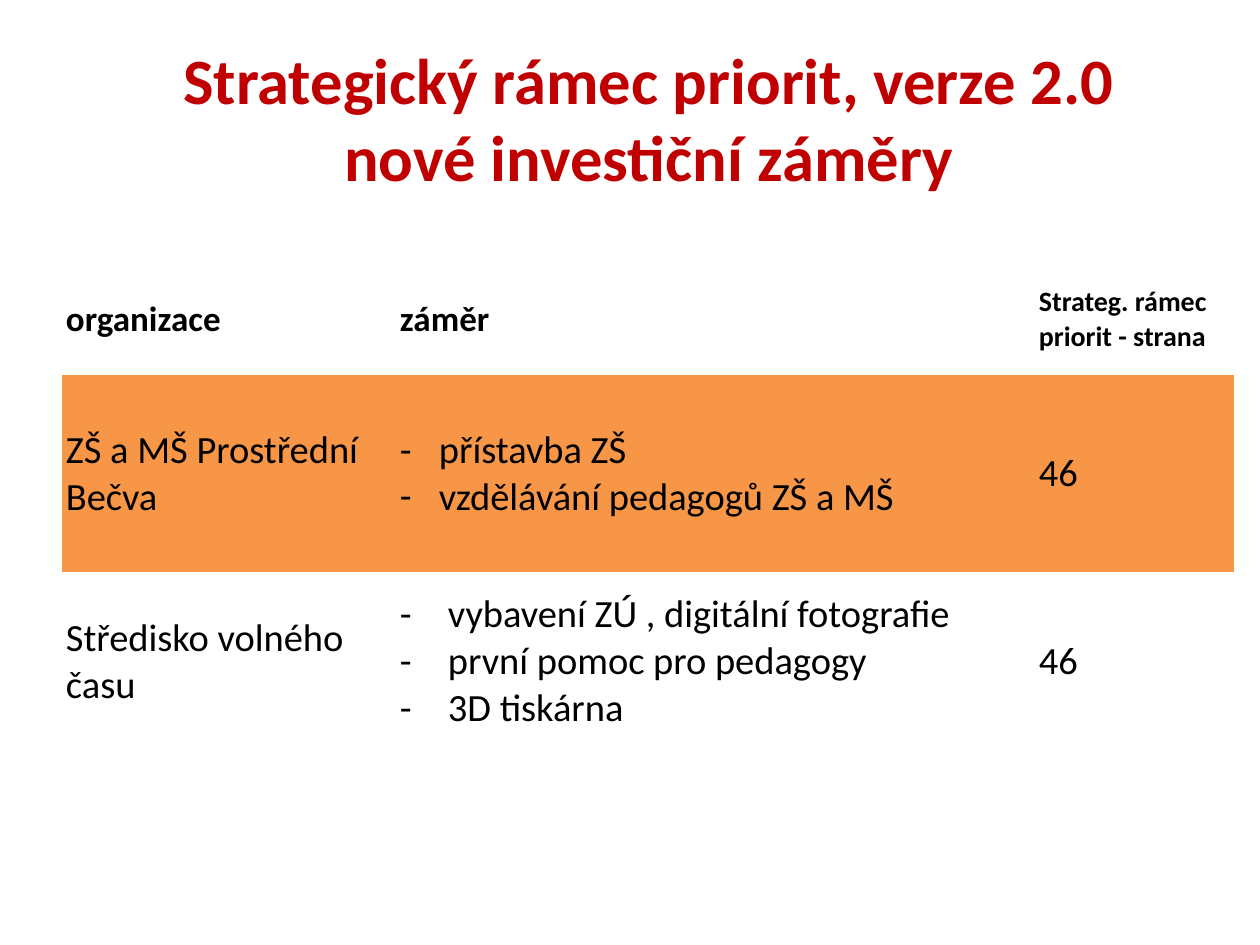
from lxml.etree import SubElement
from pptx import Presentation
from pptx.dml.color import RGBColor
from pptx.enum.text import MSO_ANCHOR, PP_ALIGN
from pptx.oxml.ns import qn
from pptx.util import Emu, Pt

FONT = "Calibri"
RED = RGBColor(0xC0, 0x00, 0x00)
BLACK = RGBColor(0x00, 0x00, 0x00)
ORANGE = RGBColor(0xF7, 0x96, 0x46)
PLAIN_TABLE = "{2D5ABB26-0587-4C30-8999-92F81FD0307C}"

HEADING = ["Strategický rámec priorit, verze 2.0", "nové investiční záměry"]
COLUMNS = [("organizace", 20), ("záměr", 20), ("Strateg. rámec priorit - strana", 16)]
PROJECTS = [
    ("ZŠ a MŠ Prostřední Bečva",
     ["přístavba ZŠ", "vzdělávání pedagogů ZŠ a MŠ"], "46", 39, ORANGE),
    ("Středisko volného času",
     ["vybavení ZÚ , digitální fotografie", "první pomoc pro pedagogy", "3D tiskárna"],
     "46", 48, None),
]


def px(length):
    return Emu(round(length * 914400 / 126))


def add_run(paragraph, text, size, color=BLACK, bold=False):
    run = paragraph.add_run()
    run.text = text
    run.font.name = FONT
    run.font.size = Pt(size)
    run.font.bold = bold
    run.font.color.rgb = color


def add_dash(paragraph, indent):
    properties = paragraph._p.get_or_add_pPr()
    properties.set("marL", str(px(indent)))
    properties.set("indent", str(-px(indent)))
    SubElement(properties, qn("a:buFont"), typeface=FONT)
    SubElement(properties, qn("a:buChar"), char="-")


def fill_cell(cell, lines, size, bold=False, indent=0, background=None):
    cell.vertical_anchor = MSO_ANCHOR.MIDDLE
    cell.margin_left = cell.margin_right = px(4)
    cell.margin_top = cell.margin_bottom = px(3)
    if background is None:
        cell.fill.background()
    else:
        cell.fill.solid()
        cell.fill.fore_color.rgb = background
    frame = cell.text_frame
    for index, line in enumerate(lines):
        paragraph = frame.add_paragraph() if index else frame.paragraphs[0]
        if indent:
            add_dash(paragraph, indent)
        add_run(paragraph, line, size, bold=bold)


def add_heading(slide, left, top, width, height):
    heading = slide.shapes.add_textbox(px(left), px(top), px(width), px(height))
    frame = heading.text_frame
    frame.word_wrap = True
    frame.vertical_anchor = MSO_ANCHOR.MIDDLE
    paragraph = frame.paragraphs[0]
    paragraph.alignment = PP_ALIGN.CENTER
    for index, line in enumerate(HEADING):
        if index:
            paragraph.add_line_break()
        add_run(paragraph, line, 36.9, RED, bold=True)


def add_projects(slide, left, top, widths, heights):
    projects = slide.shapes.add_table(
        len(heights), len(widths), px(left), px(top), px(sum(widths)), px(sum(heights))
    ).table
    projects._tbl.tblPr.find(qn("a:tableStyleId")).text = PLAIN_TABLE
    projects.horz_banding = False
    for column, width in zip(projects.columns, widths):
        column.width = px(width)
    for row, height in zip(projects.rows, heights):
        row.height = px(height)

    for column, (label, size) in enumerate(COLUMNS):
        fill_cell(projects.cell(0, column), [label], size, bold=True)
    for row, (school, plans, page, indent, background) in enumerate(PROJECTS, 1):
        fill_cell(projects.cell(row, 0), [school], 22, background=background)
        fill_cell(projects.cell(row, 1), plans, 22, indent=indent, background=background)
        fill_cell(projects.cell(row, 2), [page], 22, background=background)


def main():
    presentation = Presentation()
    presentation.slide_width = px(1260)
    presentation.slide_height = px(945)
    slide = presentation.slides.add_slide(presentation.slide_layouts[6])
    add_heading(slide, 63, 38, 1172, 158)
    add_projects(slide, 62, 264, [334, 639, 199], [111, 197, 179])
    presentation.save("out.pptx")


if __name__ == "__main__":
    main()
